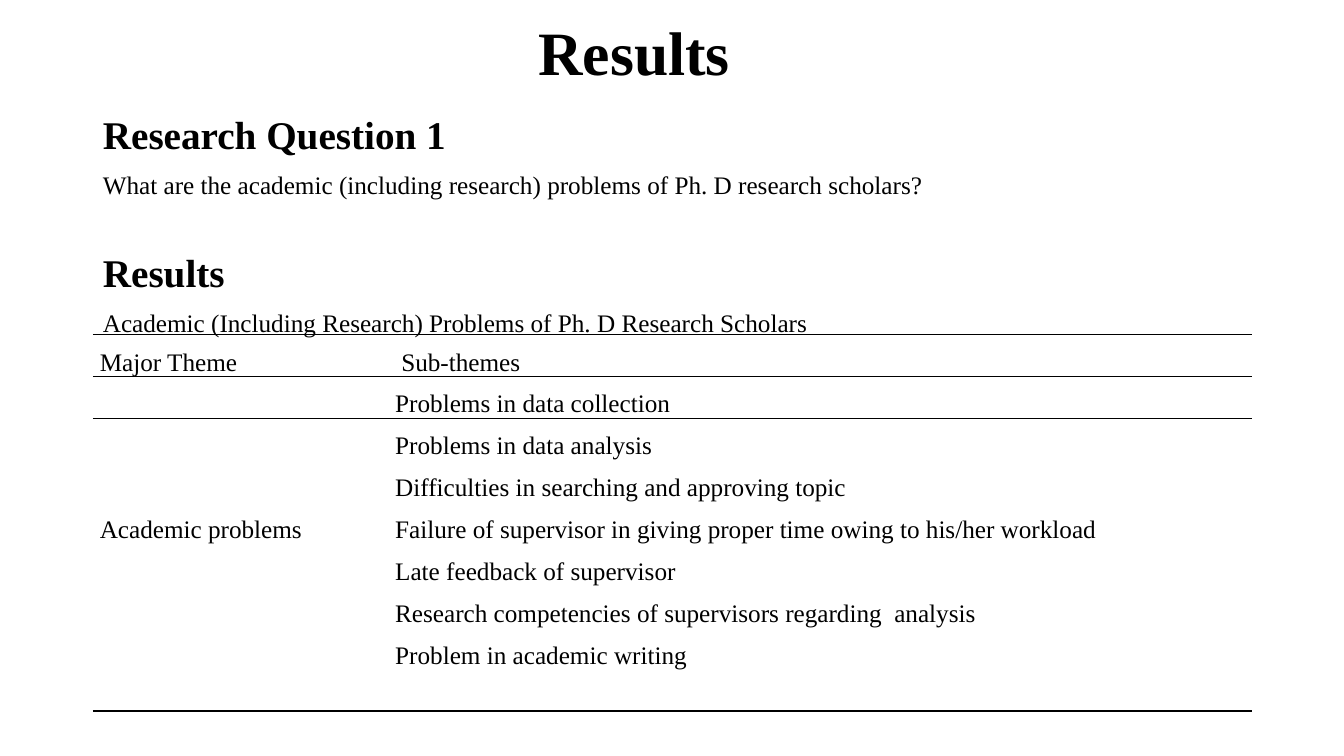
from lxml.etree import SubElement
from pptx import Presentation
from pptx.dml.color import RGBColor
from pptx.enum.text import MSO_ANCHOR, MSO_AUTO_SIZE, PP_ALIGN
from pptx.oxml.ns import qn
from pptx.util import Pt

PX = 9144  # EMU per px, 100 px to the inch
PLAIN_TABLE_STYLE = "{2D5ABB26-0587-4C30-8999-92F81FD0307C}"

SECTIONS = [
    # text, size, bold, space before in points
    ("Research Question 1", 28, True, 10),
    ("What are the academic (including research) problems of Ph. D research scholars?",
     18, False, 10),
    ("Results", 28, True, 39),
    ("Academic (Including Research) Problems of Ph. D Research Scholars", 18, False, 10),
]
THEMES = [
    ("Major Theme", "Sub-themes"),
    ("", "Problems in data collection"),
    ("", "Problems in data analysis"),
    ("", "Difficulties in searching and approving topic"),
    ("Academic problems",
     "Failure of supervisor in giving proper time owing to his/her workload"),
    ("", "Late feedback of supervisor"),
    ("", "Research competencies of supervisors regarding  analysis"),
    ("", "Problem in academic writing"),
    ("", ""),
]


def color(value):
    return RGBColor.from_string(value)


class Page:
    font = "Times New Roman"
    ink = "000000"

    def __init__(self, deck):
        self.slide = deck.slides.add_slide(deck.slide_layouts[1])

    def format(self, para, size, bold=False, spacing=0.9):
        para.line_spacing = spacing
        for font in [para.font] + [span.font for span in para.runs]:
            font.name = self.font
            font.size = Pt(size)
            font.bold = bold
            font.color.rgb = color(self.ink)

    def place(self, box, left, top, width, height):
        box.left, box.top = left * PX, top * PX
        box.width, box.height = width * PX, height * PX
        box.text_frame.word_wrap = True
        box.text_frame.auto_size = MSO_AUTO_SIZE.NONE

    def title(self, text, *area):
        box = self.slide.shapes.title
        self.place(box, *area)
        box.text_frame.text = text
        box.text_frame.vertical_anchor = MSO_ANCHOR.MIDDLE
        para = box.text_frame.paragraphs[0]
        para.alignment = PP_ALIGN.CENTER
        self.format(para, 44, bold=True)

    def body(self, sections, *area):
        box = self.slide.placeholders[1]
        self.place(box, *area)
        frame = box.text_frame
        frame.text = "\n".join(section[0] for section in sections)
        for para, (_, size, bold, before) in zip(frame.paragraphs, sections):
            self.format(para, size, bold)
            para.space_before = Pt(before)
            properties = para._p.get_or_add_pPr()
            properties.set("marL", "0")
            properties.set("indent", "0")
            SubElement(properties, qn("a:buNone"))
            # Bullet settings must precede the default run settings
            properties.append(properties.find(qn("a:defRPr")))

    def rule(self, cell, edges):
        """Draw thin lines on the given edges, named "T" and "B" in that order."""
        properties = cell._tc.get_or_add_tcPr()
        for index, edge in enumerate(edges):
            line = SubElement(properties, qn(f"a:ln{edge}"), w=str(Pt(1)))
            fill = SubElement(line, qn("a:solidFill"))
            SubElement(fill, qn("a:srgbClr"), val=self.ink)
            properties.insert(index, line)

    def table(self, rows, left, top, widths, row_height):
        frame = self.slide.shapes.add_table(
            len(rows), len(widths), left * PX, top * PX,
            sum(widths) * PX, len(rows) * row_height * PX)
        table = frame.table
        table.first_row = table.horz_banding = False
        table._tbl.tblPr.find(qn("a:tableStyleId")).text = PLAIN_TABLE_STYLE
        for column, width in zip(table.columns, widths):
            column.width = width * PX
        edges = {0: "TB", 1: "T", len(rows) - 1: "B"}
        for r, texts in enumerate(rows):
            for c, text in enumerate(texts):
                cell = table.cell(r, c)
                cell.text_frame.text = text
                cell.margin_left = cell.margin_right = 7 * PX
                cell.margin_top = cell.margin_bottom = 0
                cell.fill.background()
                self.format(cell.text_frame.paragraphs[0], 18, spacing=1.5)
                self.rule(cell, edges.get(r, ""))
        table.cell(0, 1).margin_left = 13 * PX


def main():
    deck = Presentation()
    deck.slide_width, deck.slide_height = 1333 * PX, 750 * PX
    page = Page(deck)
    page.title("Results", 54, 0, 1150, 110)
    page.body(SECTIONS, 92, 110, 1150, 615)
    page.table(THEMES, 92, 332, (293, 857), 41)
    deck.save("out.pptx")


if __name__ == "__main__":
    main()
